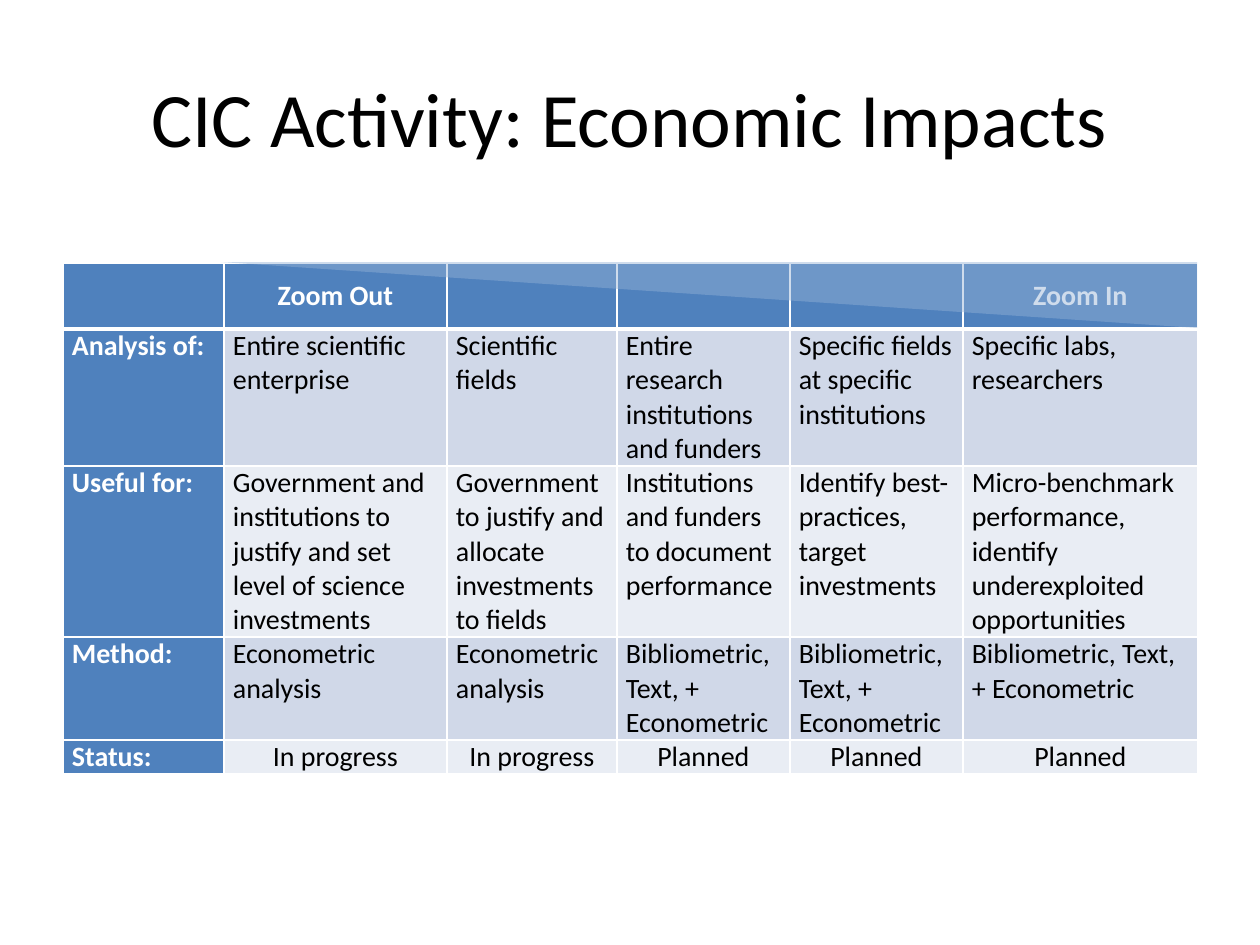
from lxml.etree import SubElement as Sub
from pptx import Presentation
from pptx.dml.color import RGBColor as RGB
from pptx.enum.shapes import MSO_SHAPE as Shape
from pptx.enum.text import MSO_ANCHOR as Anchor, PP_ALIGN as Align
from pptx.oxml.ns import qn
from pptx.util import Inches, Pt

TITLE = "CIC Activity: Economic Impacts"
ROWS = [
    ["", "Zoom Out", "", "", "", "Zoom In"],
    ["Analysis of:", "Entire scientific enterprise", "Scientific fields",
     "Entire research institutions and funders",
     "Specific fields at specific institutions", "Specific labs, researchers"],
    ["Useful for:",
     "Government and institutions to justify and set level of science investments",
     "Government to justify and allocate investments to fields",
     "Institutions and funders to document performance",
     "Identify best-practices, target investments",
     "Micro-benchmark performance, identify underexploited opportunities"],
    ["Method:"] + ["Econometric analysis"] * 2
    + ["Bibliometric, Text, + Econometric"] * 3,
    ["Status:"] + ["In progress"] * 2 + ["Planned"] * 3,
]
WIDTHS = [161, 223, 170, 173, 173, 235]
HEIGHTS = [66, 132, 165, 100, 33]
LEFT, TOP = 63, 263

FONT = "Calibri"
BLACK = RGB(0x00, 0x00, 0x00)
WHITE = RGB(0xFF, 0xFF, 0xFF)
BLUE = RGB(0x4F, 0x81, 0xBD)
PALE = RGB(0x95, 0xB3, 0xD7)
BANDS = [RGB(0xE9, 0xED, 0xF4), RGB(0xD0, 0xD8, 0xE8)]
SCALE = Inches(1) / 126


def px(n):
    return round(n * SCALE)


def style(par, size, color, bold=False):
    font = par.font
    font.name, font.size, font.bold = FONT, Pt(size), bold
    font.color.rgb = color


def edge(cell, side, width):
    line = Sub(cell._tc.get_or_add_tcPr(), qn("a:ln" + side), w=str(Pt(width)))
    Sub(Sub(line, qn("a:solidFill")), qn("a:srgbClr"), val=str(WHITE))


def fill_cell(cell, text, row, col):
    head = row == 0
    label = head or col == 0
    for side in "LRTB":
        thick = (head and side == "B") or (row == 1 and side == "T")
        edge(cell, side, 3 if thick else 1)
    cell.fill.solid()
    cell.fill.fore_color.rgb = BLUE if label else BANDS[row % 2]
    cell.margin_left = cell.margin_right = px(9)
    cell.margin_top = cell.margin_bottom = 0
    cell.vertical_anchor = Anchor.MIDDLE if head else Anchor.TOP
    cell.text = text
    par = cell.text_frame.paragraphs[0]
    mid = head or (row == len(ROWS) - 1 and col > 0)
    par.alignment = Align.CENTER if mid else Align.LEFT
    style(par, 16, WHITE if label else BLACK, label)


def main():
    deck = Presentation()
    deck.slide_width, deck.slide_height = px(1260), px(945)
    slide = deck.slides.add_slide(deck.slide_layouts[5])

    title = slide.shapes.title
    title.left, title.top, title.width, title.height = map(px, (63, 38, 1134, 158))
    title.text = TITLE
    title.text_frame.vertical_anchor = Anchor.MIDDLE
    par = title.text_frame.paragraphs[0]
    par.alignment = Align.CENTER
    style(par, 44, BLACK)

    box = map(px, (LEFT, TOP, sum(WIDTHS), sum(HEIGHTS)))
    table = slide.shapes.add_table(len(ROWS), len(WIDTHS), *box).table
    for col, width in zip(table.columns, WIDTHS):
        col.width = px(width)
    for row, height in zip(table.rows, HEIGHTS):
        row.height = px(height)
    for r, texts in enumerate(ROWS):
        for c, text in enumerate(texts):
            fill_cell(table.cell(r, c), text, r, c)

    box = map(px, (221, 262, 976, 66))
    wedge = slide.shapes.add_shape(Shape.RIGHT_TRIANGLE, *box)
    wedge.rotation = 180
    wedge.shadow.inherit = False
    wedge.line.fill.background()
    wedge.fill.solid()
    wedge.fill.fore_color.rgb = PALE
    tint = wedge._element.spPr.find(qn("a:solidFill"))[0]
    Sub(tint, qn("a:alpha"), val="45000")

    deck.save("out.pptx")


if __name__ == "__main__":
    main()
